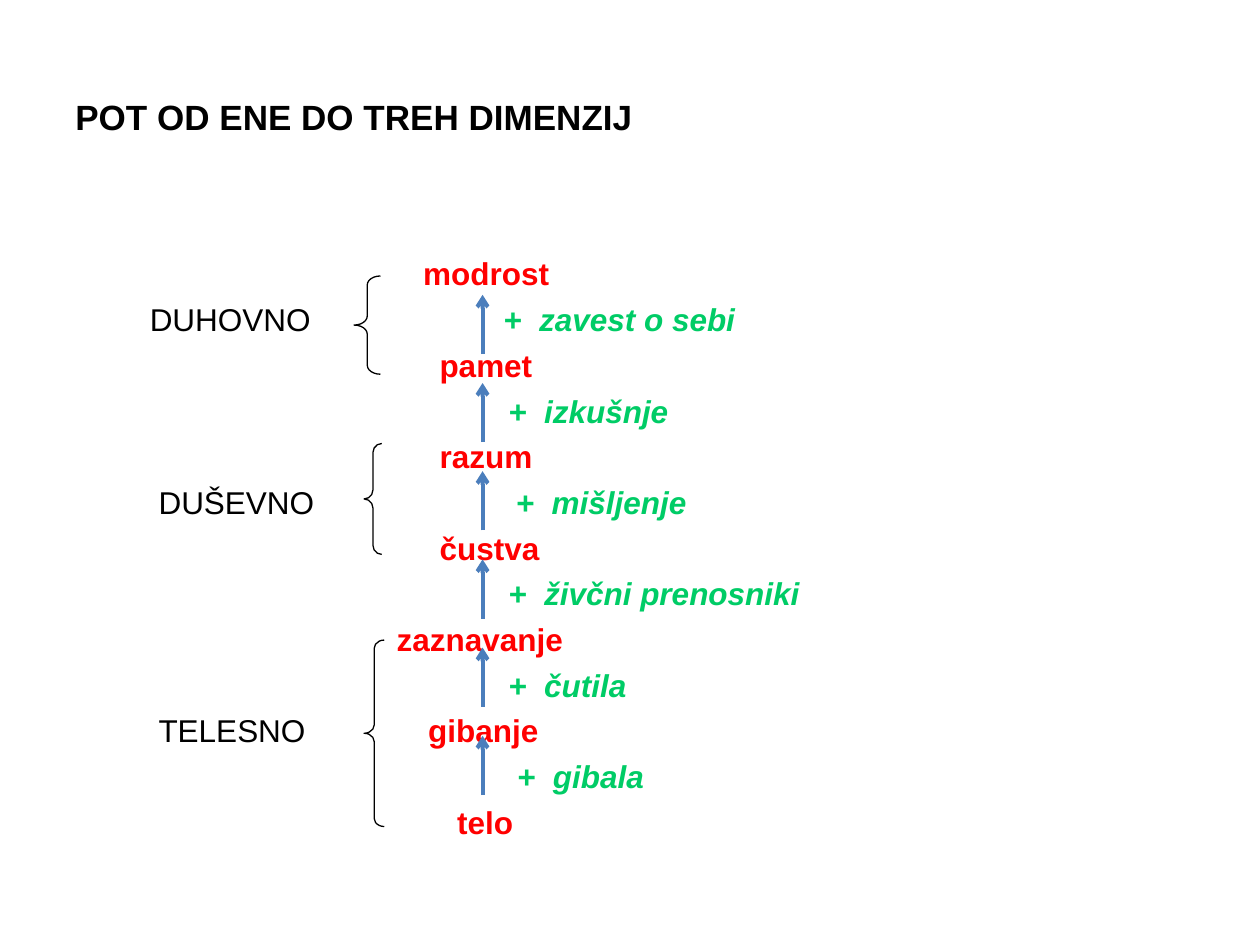
from lxml import etree
from pptx import Presentation
from pptx import util as u
from pptx.dml.color import RGBColor
from pptx.enum import shapes, text
from pptx.oxml.ns import qn

BLACK = RGBColor(0x00, 0x00, 0x00)
RED = RGBColor(0xFF, 0x00, 0x00)
GREEN = RGBColor(0x00, 0xCC, 0x66)
BLUE = RGBColor(0x4B, 0x7E, 0xBC)

LABEL = {"bold": False, "italic": False, "color": BLACK}
STAGE = {"bold": True, "italic": False, "color": RED}
PLUS = {"bold": True, "italic": False, "color": GREEN}
GAIN = {"bold": True, "italic": True, "color": GREEN}
TITLE = {"bold": True, "italic": False, "color": BLACK}


def label(x, word):
    return (x, word, LABEL)


def stage(x, word):
    return (x, word, STAGE)


def gain(x, word):
    return [(x, "+", PLUS), (x + 0.28, word, GAIN)]


ROWS = [
    [stage(3.36, "modrost")],
    [label(1.19, "DUHOVNO"), *gain(4, "zavest o sebi")],
    [stage(3.49, "pamet")],
    gain(4.04, "izkušnje"),
    [stage(3.49, "razum")],
    [label(1.26, "DUŠEVNO"), *gain(4.1, "mišljenje")],
    [stage(3.49, "čustva")],
    gain(4.04, "živčni prenosniki"),
    [stage(3.15, "zaznavanje")],
    gain(4.04, "čutila"),
    [label(1.26, "TELESNO"), stage(3.4, "gibanje")],
    gain(4.11, "gibala"),
    [stage(3.63, "telo")],
]

BRACES = [
    (2.81, 2.19, 0.21, 0.78, 0.34),
    (2.89, 5.08, 0.16, 1.48, 0.41),
    (2.89, 3.52, 0.14, 0.88, 0.51),
]


def add_run(para, words, size, style):
    run = para.add_run()
    run.text = words
    font = run.font
    font.name = "Arial"
    font.size = u.Pt(size)
    for key in ("bold", "italic"):
        setattr(font, key, style[key])
    font.color.rgb = style["color"]


def add_box(slide, place, form):
    box = slide.shapes.add_textbox(*map(u.Inches, place))
    frame = box.text_frame
    for key, value in {"word_wrap": True, **form}.items():
        setattr(frame, key, value)
    return frame


def set_tabs(para, stops):
    tabs = etree.SubElement(para._p.get_or_add_pPr(), qn("a:tabLst"))
    for stop in stops:
        etree.SubElement(tabs, qn("a:tab"), pos=str(u.Inches(stop)), algn="l")


def add_rows(slide, left):
    frame = add_box(slide, (left, 1.64, 8.98, 5.16),
                    {"margin_top": u.Inches(0.38)})
    for i, row in enumerate(ROWS):
        para = frame.add_paragraph() if i else frame.paragraphs[0]
        para.space_before = u.Pt(4.5 if i else 0)
        set_tabs(para, [x - left - 0.1 for x, _, _ in row])
        for _, word, style in row:
            add_run(para, "\t" + word, 18, style)


def add_brace(slide, x, y, w, h, bend):
    brace = slide.shapes.add_shape(
        shapes.MSO_SHAPE.LEFT_BRACE, *map(u.Inches, (x, y, w, h)))
    brace.shadow.inherit = False
    brace.adjustments[0] = bend
    brace.fill.background()
    brace.line.color.rgb = BLACK
    brace.line.width = u.Pt(0.75)


def add_arrow(slide, x, y, length):
    arrow = slide.shapes.add_connector(
        shapes.MSO_CONNECTOR.STRAIGHT, *map(u.Inches, (x, y + length, x, y)))
    arrow.line.color.rgb = BLUE
    arrow.line.width = u.Pt(2.25)
    etree.SubElement(arrow.line._get_or_add_ln(), qn("a:tailEnd"), type="arrow")
    etree.SubElement(arrow._element.spPr, qn("a:effectLst"))


def main():
    deck = Presentation()
    deck.slide_width, deck.slide_height = u.Inches(10), u.Inches(7.5)
    slide = deck.slides.add_slide(deck.slide_layouts[6])
    head = add_box(slide, (0.5, 0.3, 9, 1.25),
                   {"vertical_anchor": text.MSO_ANCHOR.MIDDLE})
    add_run(head.paragraphs[0], "POT OD ENE DO TREH DIMENZIJ", 20, TITLE)
    add_rows(slide, 0.55)
    for brace in BRACES:
        add_brace(slide, *brace)
    for i in range(6):
        add_arrow(slide, 3.83, 2.34 + 0.7 * i, 0.47)
    deck.save("out.pptx")


if __name__ == "__main__":
    main()
